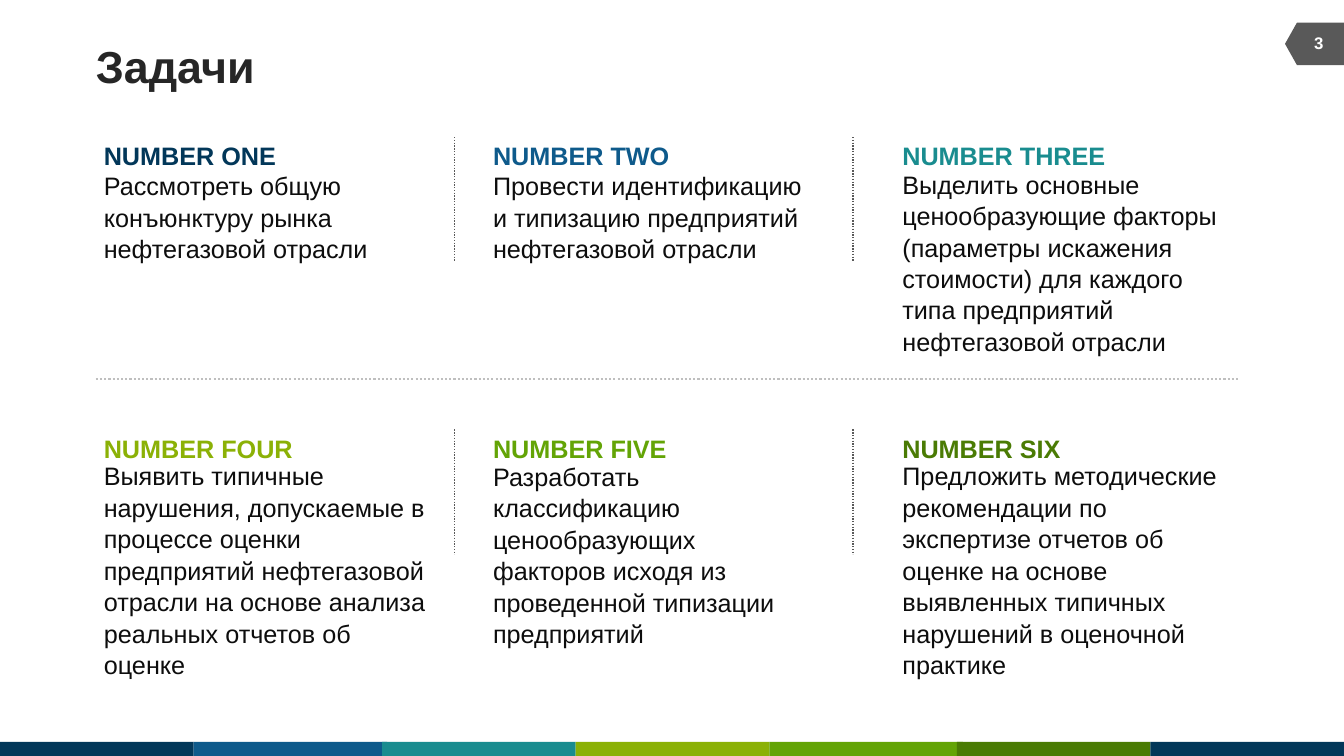
from pptx import Presentation
from pptx import util as u
from pptx.dml.color import RGBColor
from pptx.enum import dml, shapes, text
from pptx.oxml.ns import qn
from lxml import etree

COLORS = {
    "navy": "023759", "blue": "0E5A8B", "teal": "198C8F",
    "lime": "8BB106", "green": "63A406", "forest": "4A7B04",
    "title": "262626", "body": "0D0D0D", "gray": "595959",
    "rule": "BFBFBF", "white": "FFFFFF",
}


class SlideBuilder:
    """Holds the text style and the current slide."""

    font = "Arial"

    def __init__(self, prs):
        self.s = prs.slides.add_slide(prs.slide_layouts[5])

    def color(self, name):
        return RGBColor.from_string(COLORS[name])

    def set_text(self, sp, words, size, color, bold=False, wrap=True,
                 align=text.PP_ALIGN.LEFT, spacing=None):
        tf = sp.text_frame
        tf.word_wrap = wrap
        tf.vertical_anchor = text.MSO_ANCHOR.MIDDLE
        tf.margin_left = tf.margin_right = 0
        tf.margin_top = tf.margin_bottom = 0
        p = tf.paragraphs[0]
        p.alignment = align
        p.line_spacing = spacing
        r = p.add_run()
        r.text = words
        r.font.name, r.font.size, r.font.bold = self.font, u.Pt(size), bold
        r.font.color.rgb = self.color(color)
        return tf

    def title(self, words, *box):
        sp = self.s.shapes.title
        sp.left, sp.top, sp.width, sp.height = map(u.Inches, box)
        tf = self.set_text(sp, words, 32, "title", bold=True, wrap=False)
        tf.auto_size = text.MSO_AUTO_SIZE.NONE

    def label(self, words, box, size, color, **style):
        sp = self.s.shapes.add_textbox(*map(u.Inches, box))
        return self.set_text(sp, words, size, color, **style)

    def block(self, kind, box, color, rotation=0):
        sp = self.s.shapes.add_shape(kind, *map(u.Inches, box))
        sp.shadow.inherit = False
        sp.fill.solid()
        sp.fill.fore_color.rgb = self.color(color)
        sp.line.fill.background()
        sp.rotation = rotation

    def dotted(self, x1, y1, x2, y2, color, width):
        c = self.s.shapes.add_connector(
            shapes.MSO_CONNECTOR.STRAIGHT, *map(u.Inches, (x1, y1, x2, y2)))
        c.line.color.rgb = self.color(color)
        c.line.width = u.Pt(width)
        c.line.dash_style = dml.MSO_LINE.ROUND_DOT
        etree.SubElement(c._element.spPr, qn("a:effectLst"))

    def task(self, x, y, heading, color, words, lines):
        style = {"spacing": 1.04}
        tf = self.label(heading, (x, y, 2.03, 0.3), 18, color,
                        bold=True, wrap=False, **style)
        tf.auto_size = text.MSO_AUTO_SIZE.SHAPE_TO_FIT_TEXT
        tf = self.label(words, (x, y + 0.31, 3.19, 0.3 * lines), 18,
                        "body", **style)
        tf.auto_size = text.MSO_AUTO_SIZE.SHAPE_TO_FIT_TEXT


TASKS = [
    ("NUMBER ONE", "navy", 3,
     "Рассмотреть общую конъюнктуру рынка нефтегазовой отрасли"),
    ("NUMBER TWO", "blue", 3,
     "Провести идентификацию и типизацию предприятий нефтегазовой отрасли"),
    ("NUMBER THREE", "teal", 6,
     "Выделить основные ценообразующие факторы (параметры искажения "
     "стоимости) для каждого типа предприятий нефтегазовой отрасли"),
    ("NUMBER FOUR", "lime", 7,
     "Выявить типичные нарушения, допускаемые в процессе оценки предприятий "
     "нефтегазовой отрасли на основе анализа реальных отчетов об оценке"),
    ("NUMBER FIVE", "green", 6,
     "Разработать классификацию ценообразующих факторов исходя из "
     "проведенной типизации предприятий"),
    ("NUMBER SIX", "forest", 7,
     "Предложить методические рекомендации по экспертизе отчетов об оценке "
     "на основе выявленных типичных нарушений в оценочной практике"),
]
COLUMNS = (1.03, 4.89, 8.95)
ROWS = (1.39, 4.29)
DIVIDERS = (4.51, 8.46)
BANDS = [(0, "navy"), (1.92, "blue"), (3.79, "teal"), (5.71, "lime"),
         (7.63, "green"), (9.49, "forest"), (11.41, "navy")]


def main():
    prs = Presentation()
    prs.slide_width, prs.slide_height = u.Inches(13.33), u.Inches(7.5)
    b = SlideBuilder(prs)

    # Colour strip along the bottom
    for x, color in BANDS:
        b.block(shapes.MSO_SHAPE.RECTANGLE, (x, 7.36, 1.92, 0.14), color)

    # Title and page number tag
    b.title("Задачи", 0.95, 0.39, 8.22, 0.52)
    b.block(shapes.MSO_SHAPE.FLOWCHART_OFFPAGE_CONNECTOR,
            (12.83, 0.14, 0.42, 0.59), "gray", rotation=90)
    b.label("3", (12.8, 0.22, 0.56, 0.4), 12, "white", bold=True,
            align=text.PP_ALIGN.CENTER)

    # Six tasks in a grid
    for i, (heading, color, lines, words) in enumerate(TASKS):
        row, col = divmod(i, len(COLUMNS))
        b.task(COLUMNS[col], ROWS[row], heading, color, words, lines)

    # Dotted dividers
    for y in ROWS:
        for x in DIVIDERS:
            b.dotted(x, y - 0.03, x, y + 1.21, "gray", 1)
    b.dotted(0.95, 3.76, 12.28, 3.76, "rule", 1.5)

    prs.save("out.pptx")


if __name__ == "__main__":
    main()
